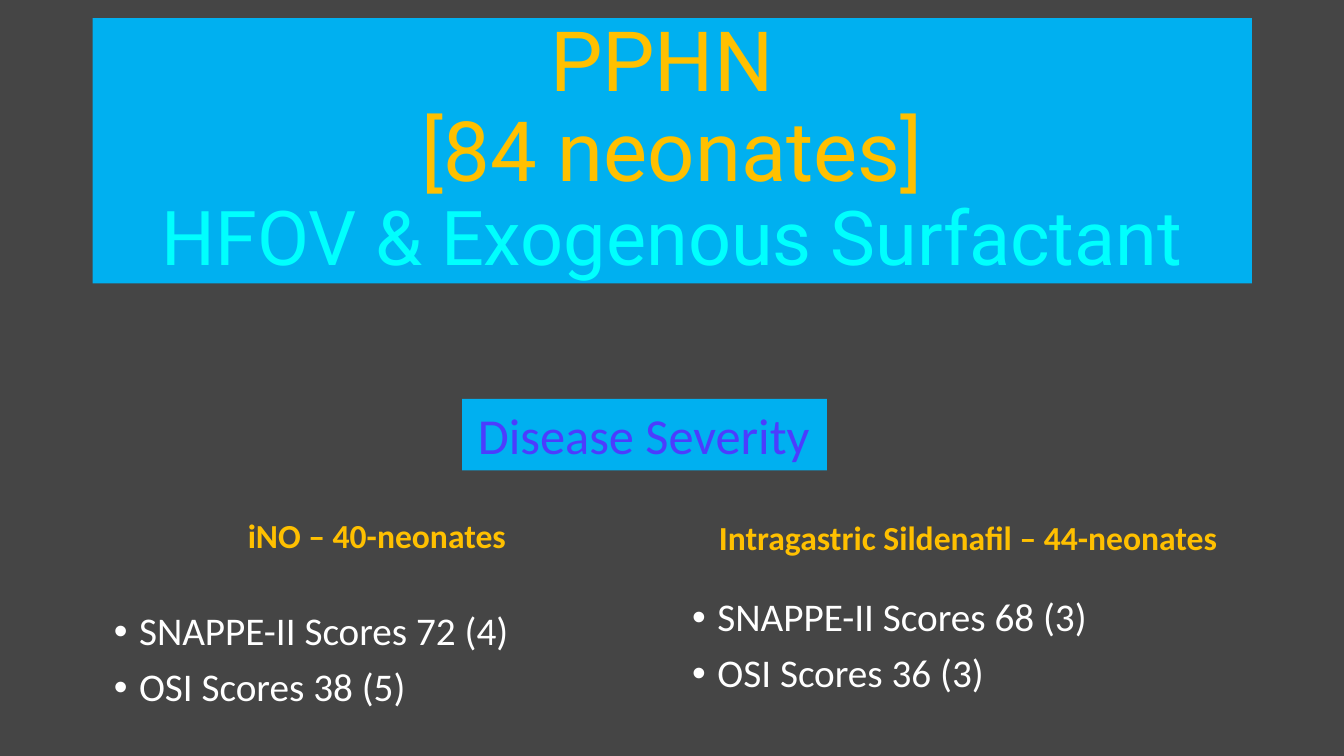
from lxml import etree
from pptx import Presentation
from pptx.dml.color import RGBColor
from pptx.enum.shapes import MSO_SHAPE
from pptx.enum.text import MSO_ANCHOR, PP_ALIGN
from pptx.oxml.ns import qn
from pptx.util import Pt

RECT = MSO_SHAPE.RECTANGLE
TOP, MIDDLE, BOTTOM = MSO_ANCHOR.TOP, MSO_ANCHOR.MIDDLE, MSO_ANCHOR.BOTTOM
LEFT, CENTER = PP_ALIGN.LEFT, PP_ALIGN.CENTER

COLORS = {
    "back": "454545",
    "panel": "00B0F0",
    "gold": "FFC000",
    "aqua": "00FFFE",
    "violet": "4C3DFE",
    "white": "FFFFFF",
}

# Left, heading top, list left, list top, width, heading, scores
GROUPS = [
    (66.2, 335.5, 74.2, 433.4, 406, "iNO – 40-neonates",
     ["SNAPPE-II Scores 72 (4)", "OSI Scores 38 (5)"]),
    (487.4, 337, 487.4, 423.4, 408.2, "Intragastric Sildenafil – 44-neonates",
     ["SNAPPE-II Scores 68 (3)", "OSI Scores 36 (3)"]),
]


def color(name):
    return RGBColor.from_string(COLORS[name])


def style(para, size, tint, font="Calibri", bold=False, align=LEFT):
    para.alignment = align
    for run in para.runs:
        run.font.name = font
        run.font.size = Pt(size)
        run.font.bold = bold
        run.font.color.rgb = color(tint)


def add_bullet(para):
    props = para._p.get_or_add_pPr()
    props.set("marL", str(Pt(18)))
    props.set("indent", str(Pt(-18)))
    etree.SubElement(props, qn("a:buFont")).set("typeface", "Arial")
    etree.SubElement(props, qn("a:buChar")).set("char", "•")


def add_text(slide, box, lines, anchor):
    """Add a wrapping text box and return its paragraphs."""
    frame = slide.shapes.add_textbox(*map(Pt, box)).text_frame
    frame.word_wrap = True
    frame.vertical_anchor = anchor
    frame.text = "\n".join(lines)
    for para in frame.paragraphs:
        para.line_spacing = 0.9
    return frame.paragraphs


def add_panel(slide, box, lines, anchor):
    """Add a filled panel and return its text frame."""
    panel = slide.shapes.add_shape(RECT, *map(Pt, box))
    panel.shadow.inherit = False
    panel.fill.solid()
    panel.fill.fore_color.rgb = color("panel")
    panel.line.fill.background()
    frame = panel.text_frame
    frame.vertical_anchor = anchor
    frame.text = "\n".join(lines)
    return frame


def add_title(slide):
    lines = ["PPHN ", "[84 neonates]", "HFOV & Exogenous Surfactant"]
    frame = add_panel(slide, (66.2, 13, 828, 189.4), lines, MIDDLE)
    looks = [(59.4, "gold"), (59.4, "gold"), (54, "aqua")]
    for para, (size, tint) in zip(frame.paragraphs, looks):
        para.line_spacing = 0.9
        style(para, size, tint, "Roboto", align=CENTER)


def add_topic(slide):
    frame = add_panel(slide, (330, 285, 260.6, 51), ["Disease Severity"], TOP)
    frame.margin_left = Pt(11.3)
    frame.word_wrap = False
    style(frame.paragraphs[0], 36, "violet")


def add_group(slide, left, top, list_left, list_top, width, heading, scores):
    for para in add_text(slide, (left, top, width, 64.8), [heading], BOTTOM):
        style(para, 24, "gold", bold=True, align=CENTER)
    box = (list_left, list_top, width, 85.7)
    for index, para in enumerate(add_text(slide, box, scores, TOP)):
        para.space_before = Pt(10 if index else 0)
        add_bullet(para)
        style(para, 28, "white")


def main():
    deck = Presentation()
    deck.slide_width, deck.slide_height = Pt(960), Pt(540)
    slide = deck.slides.add_slide(deck.slide_layouts[6])
    slide.background.fill.solid()
    slide.background.fill.fore_color.rgb = color("back")
    add_title(slide)
    add_topic(slide)
    for group in GROUPS:
        add_group(slide, *group)
    deck.save("out.pptx")


if __name__ == "__main__":
    main()
